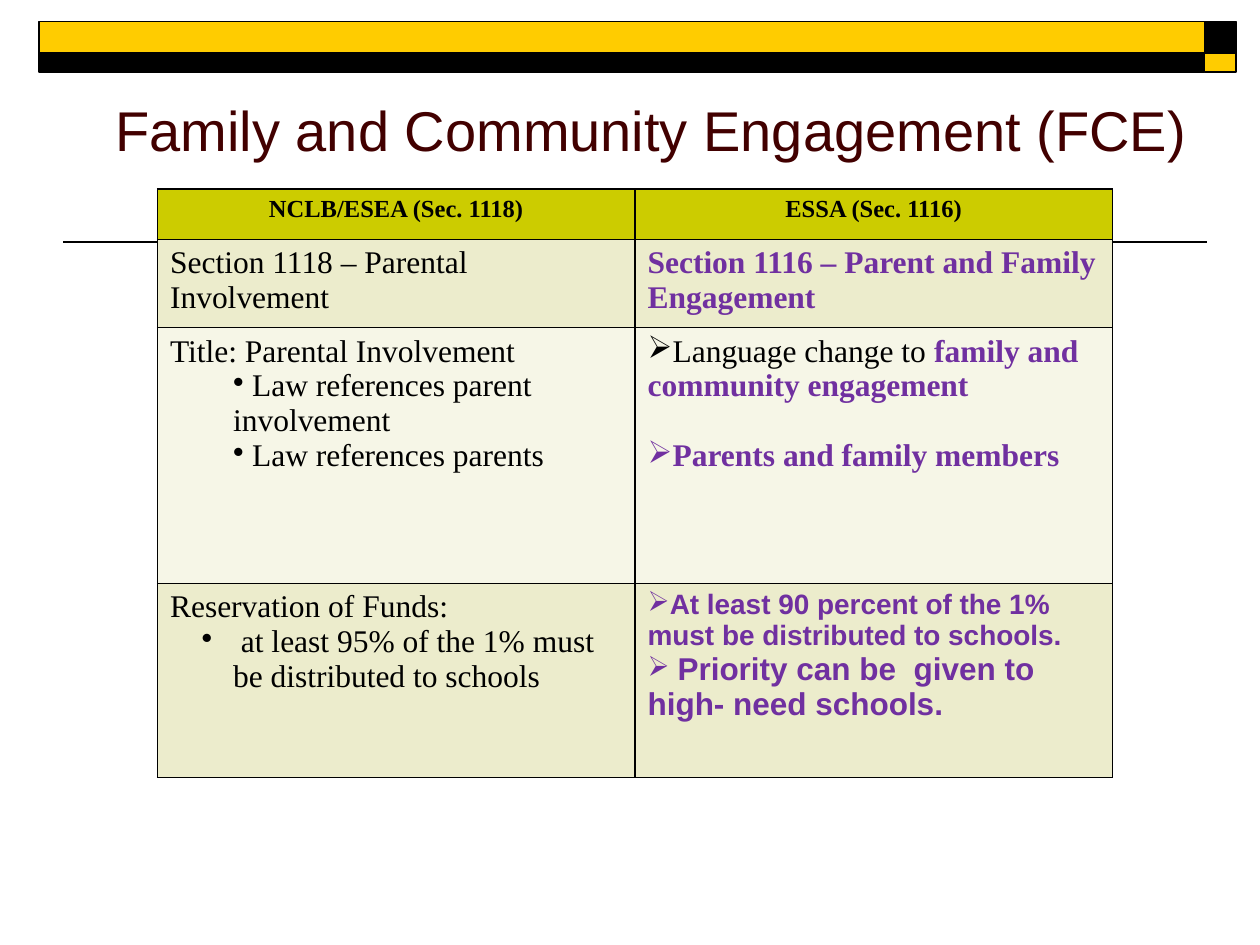
from dataclasses import dataclass

from lxml.etree import SubElement
from pptx import Presentation
from pptx.dml.color import RGBColor
from pptx.enum.shapes import MSO_CONNECTOR, MSO_SHAPE
from pptx.enum.text import MSO_ANCHOR, PP_ALIGN
from pptx.oxml.ns import qn
from pptx.util import Inches, Pt

BLACK = RGBColor(0x00, 0x00, 0x00)
GOLD = RGBColor(0xFF, 0xCC, 0x00)
MAROON = RGBColor(0x42, 0x00, 0x00)
PURPLE = RGBColor(0x70, 0x30, 0xA0)
OLIVE = RGBColor(0xCC, 0xCC, 0x00)
SAND = RGBColor(0xEC, 0xEC, 0xCC)
CREAM = RGBColor(0xF6, 0xF6, 0xE7)

SERIF = "Times New Roman"
SANS = "Arial"
ARROW = "➢"
DOT = "•"


@dataclass
class Run:
    text: str
    size: float = 18
    font: str = SERIF
    color: RGBColor = BLACK
    bold: bool = False


@dataclass
class Line:
    runs: list[Run]
    bullet: str = ""
    left: float = 0
    hanging: float = 0
    before: float = 0
    align: PP_ALIGN = PP_ALIGN.LEFT


@dataclass
class Bar:
    left: float
    top: float
    width: float
    height: float
    color: RGBColor


def line(text: str, *, bullet: str = "", left: float = 0, hanging: float = 0,
         before: float = 0, align: PP_ALIGN = PP_ALIGN.LEFT, **run_format) -> Line:
    """Describe a paragraph holding a single run."""
    return Line([Run(text, **run_format)], bullet, left, hanging, before, align)


def emphasis(text: str, **text_format) -> Line:
    return line(text, color=PURPLE, bold=True, **text_format)


def heading(text: str) -> Line:
    return line(text, size=14, bold=True, align=PP_ALIGN.CENTER)


def write_lines(text_frame, lines: list[Line]) -> None:
    for index, item in enumerate(lines):
        paragraph = text_frame.paragraphs[0] if index == 0 else text_frame.add_paragraph()
        paragraph.alignment = item.align
        properties = paragraph._p.get_or_add_pPr()
        properties.set("marL", str(Inches(item.left)))
        properties.set("indent", str(Inches(-item.hanging)))
        if item.bullet:
            SubElement(properties, qn("a:buChar"), char=item.bullet)
        else:
            SubElement(properties, qn("a:buNone"))
        if index:
            paragraph.space_before = Pt(item.before)
        for part in item.runs:
            run = paragraph.add_run()
            run.text = part.text
            run.font.size = Pt(part.size)
            run.font.name = part.font
            run.font.bold = part.bold
            run.font.color.rgb = part.color


def add_bar(slide, bar: Bar) -> None:
    shape = slide.shapes.add_shape(
        MSO_SHAPE.RECTANGLE, Inches(bar.left), Inches(bar.top),
        Inches(bar.width), Inches(bar.height))
    shape.shadow.inherit = False
    shape.fill.solid()
    shape.fill.fore_color.rgb = bar.color
    shape.line.color.rgb = BLACK
    shape.line.width = Pt(1)


def add_rule(slide, left: float, right: float, top: float) -> None:
    connector = slide.shapes.add_connector(
        MSO_CONNECTOR.STRAIGHT, Inches(left), Inches(top), Inches(right), Inches(top))
    connector.line.color.rgb = BLACK
    connector.line.width = Pt(1)
    SubElement(connector._element.spPr, qn("a:effectLst"))


def set_borders(cell) -> None:
    properties = cell._tc.get_or_add_tcPr()
    for side in ("lnL", "lnR", "lnT", "lnB"):
        border = SubElement(properties, qn(f"a:{side}"), w=str(Pt(1)))
        fill = SubElement(border, qn("a:solidFill"))
        SubElement(fill, qn("a:srgbClr"), val=str(BLACK))


def add_comparison(slide, rows: list[tuple]) -> None:
    table = slide.shapes.add_table(
        len(rows), 2, Inches(1.25), Inches(1.5), Inches(7.58),
        Inches(sum(row[0] for row in rows))).table
    for column in table.columns:
        column.width = Inches(3.79)
    for row_index, (height, color, *cells) in enumerate(rows):
        table.rows[row_index].height = Inches(height)
        for column_index, lines in enumerate(cells):
            cell = table.cell(row_index, column_index)
            set_borders(cell)
            cell.fill.solid()
            cell.fill.fore_color.rgb = color
            write_lines(cell.text_frame, lines)


BARS = [
    Bar(9.56, 0.17, 0.25, 0.25, BLACK),
    Bar(0.31, 0.17, 9.25, 0.25, GOLD),
    Bar(0.31, 0.42, 9.25, 0.15, BLACK),
    Bar(9.56, 0.42, 0.25, 0.15, GOLD),
]

# Row height, fill, left cell, right cell
ROWS = [
    (0.4, OLIVE, [heading("NCLB/ESEA (Sec. 1118)")], [heading("ESSA (Sec. 1116)")]),
    (0.7, SAND,
     [line("Section 1118 – Parental Involvement")],
     [emphasis("Section 1116 – Parent and Family Engagement")]),
    (2.03, CREAM,
     [line("Title: Parental Involvement"),
      line(" Law references parent involvement", bullet=DOT, left=0.5),
      line(" Law references parents", bullet=DOT, left=0.5)],
     [Line([Run("Language change to "),
            Run("family and community engagement", color=PURPLE, bold=True)], ARROW),
      emphasis("Parents and family members", bullet=ARROW, before=20)]),
    (1.54, SAND,
     [line("Reservation of Funds:"),
      line(" at least 95% of the 1% must be distributed to schools",
           bullet=DOT, left=0.5, hanging=0.25)],
     [emphasis("At least 90 percent of the 1% must be distributed to schools.",
               bullet=ARROW, size=16, font=SANS),
      Line([Run(" ", 16, SANS, PURPLE, True),
            Run("Priority can be  given to high- need schools.", 18, SANS, PURPLE, True)],
           ARROW)]),
]


def main() -> None:
    presentation = Presentation()
    presentation.slide_width = Inches(10)
    presentation.slide_height = Inches(7.5)
    slide = presentation.slides.add_slide(presentation.slide_layouts[5])

    # Banner and rule
    add_rule(slide, 0.5, 9.58, 1.92)
    for bar in BARS:
        add_bar(slide, bar)

    # Title
    title = slide.shapes.title
    title.left, title.top = Inches(0.67), Inches(0.67)
    title.width, title.height = Inches(9), Inches(0.67)
    title.text_frame.vertical_anchor = MSO_ANCHOR.BOTTOM
    write_lines(title.text_frame, [
        line("Family and Community Engagement (FCE)", size=32, font=SANS,
             color=MAROON, align=PP_ALIGN.CENTER)])

    # Comparison of the two laws
    add_comparison(slide, ROWS)
    presentation.save("out.pptx")


if __name__ == "__main__":
    main()
